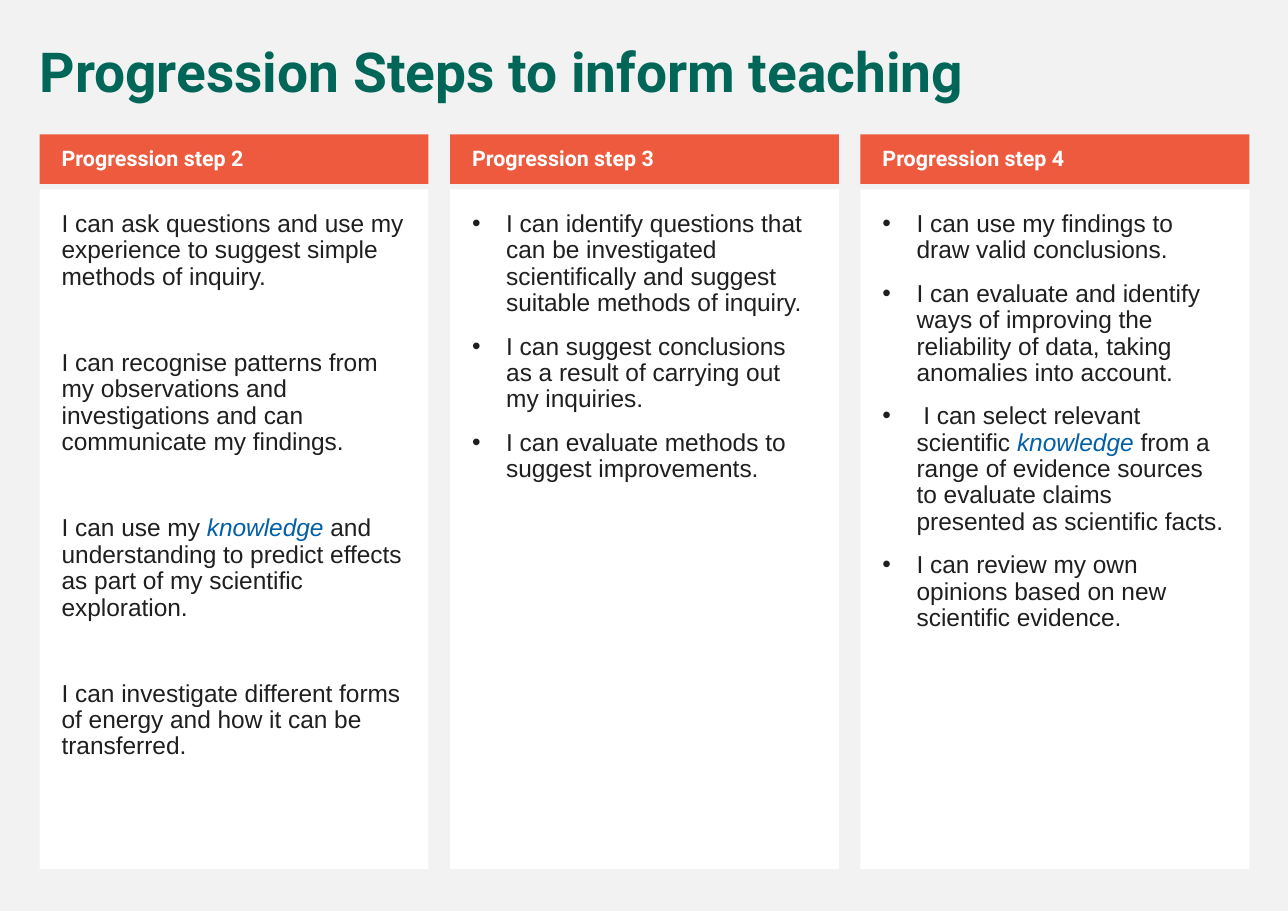
from lxml import etree
from pptx import Presentation
from pptx import util as u
from pptx.dml import color
from pptx.enum import shapes, text
from pptx.oxml import ns

COLORS = {"back": "F2F2F2", "title": "006758", "header": "ED5A3E",
          "white": "FFFFFF", "ink": "1F1F1F", "term": "0360A6"}
LEFT, RIGHT, WIDTH = 0.36, 11.34, 3.53
STEPS = [
    ("Progression step 2", False, 39, [
        "I can ask questions and use my experience to suggest simple methods of inquiry.",
        "I can recognise patterns from my observations and investigations and can "
        "communicate my findings.",
        "I can use my *knowledge* and understanding to predict effects as part of my "
        "scientific exploration.",
        "I can investigate different forms of energy and how it can be transferred."]),
    ("Progression step 3", True, 11, [
        "I can identify questions that can be investigated scientifically and suggest "
        "suitable methods of inquiry.",
        "I can suggest conclusions as a result of carrying out my inquiries.",
        "I can evaluate methods to suggest improvements."]),
    ("Progression step 4", True, 11, [
        "I can use my findings to draw valid conclusions.",
        "I can evaluate and identify ways of improving the reliability of data, taking "
        "anomalies into account.",
        " I can select relevant scientific *knowledge* from a range of evidence sources "
        "to evaluate claims presented as scientific facts.",
        "I can review my own opinions based on new scientific evidence."]),
]


def rgb(name):
    return color.RGBColor.from_string(COLORS[name])


class StepSlide:
    """Holds the slide and the style of its title, headers and panels."""

    def __init__(self, prs):
        self.s = prs.slides.add_slide(prs.slide_layouts[5])
        self.s.background.fill.solid()
        self.s.background.fill.fore_color.rgb = rgb("back")

    def frame(self, sp, insets, anchor):
        tf = sp.text_frame
        tf.word_wrap = True
        tf.auto_size = text.MSO_AUTO_SIZE.NONE
        tf.vertical_anchor = anchor
        tf.margin_left, tf.margin_top, tf.margin_right, tf.margin_bottom = map(u.Inches, insets)
        return tf

    def paragraph(self, p, before=11):
        p.alignment = text.PP_ALIGN.LEFT
        p.line_spacing = 0.9
        p.space_before = u.Pt(before)

    def run(self, p, words, size, font, fill, bold=False, italic=False):
        r = p.add_run()
        r.text = words
        r.font.size, r.font.name = u.Pt(size), font
        r.font.bold, r.font.italic = bold, italic
        r.font.color.rgb = rgb(fill)

    def bullet(self, p):
        pPr = p._p.get_or_add_pPr()
        pPr.set("marL", str(u.Inches(0.31)))
        pPr.set("indent", str(u.Inches(-0.31)))
        etree.SubElement(pPr, ns.qn("a:buFont")).set("typeface", "Arial")
        etree.SubElement(pPr, ns.qn("a:buChar")).set("char", "•")

    def box(self, x, y, w, h, fill):
        sp = self.s.shapes.add_shape(shapes.MSO_SHAPE.RECTANGLE, *map(u.Inches, (x, y, w, h)))
        sp.shadow.inherit = False
        sp.fill.solid()
        sp.fill.fore_color.rgb = rgb(fill)
        sp.line.fill.background()
        return sp

    def title(self, words):
        sp = self.s.shapes.title
        sp.left, sp.top, sp.width, sp.height = map(u.Inches, (0.26, 0.36, 11.08, 0.65))
        p = self.frame(sp, (0.1, 0.05, 0.1, 0.05), text.MSO_ANCHOR.TOP).paragraphs[0]
        self.paragraph(p)
        self.run(p, words, 36, "Roboto", "title", bold=True)

    def header(self, x, words):
        sp = self.box(x, 1.22, WIDTH, 0.45, "header")
        p = self.frame(sp, (0.2, 0.05, 0.1, 0.05), text.MSO_ANCHOR.MIDDLE).paragraphs[0]
        self.paragraph(p)
        self.run(p, words, 14, "Roboto", "white", bold=True)

    def panel(self, x, statements, bulleted, gap):
        sp = self.box(x, 1.72, WIDTH, 6.17, "white")
        tf = self.frame(sp, (0.2,) * 4, text.MSO_ANCHOR.TOP)
        for i, statement in enumerate(statements):
            p = tf.add_paragraph() if i else tf.paragraphs[0]
            self.paragraph(p, gap if i else 11)
            if bulleted:
                self.bullet(p)
            for j, words in enumerate(statement.split("*")):
                is_term = j % 2 == 1
                self.run(p, words, 16, "Arial", "term" if is_term else "ink", italic=is_term)


def main():
    prs = Presentation()
    prs.slide_width, prs.slide_height = u.Inches(11.69), u.Inches(8.27)
    slide = StepSlide(prs)
    slide.title("Progression Steps to inform teaching")
    pitch = (RIGHT - LEFT - WIDTH) / (len(STEPS) - 1)
    for i, (name, bulleted, gap, statements) in enumerate(STEPS):
        x = LEFT + i * pitch
        slide.panel(x, statements, bulleted, gap)
        slide.header(x, name)
    prs.save("out.pptx")


if __name__ == "__main__":
    main()
